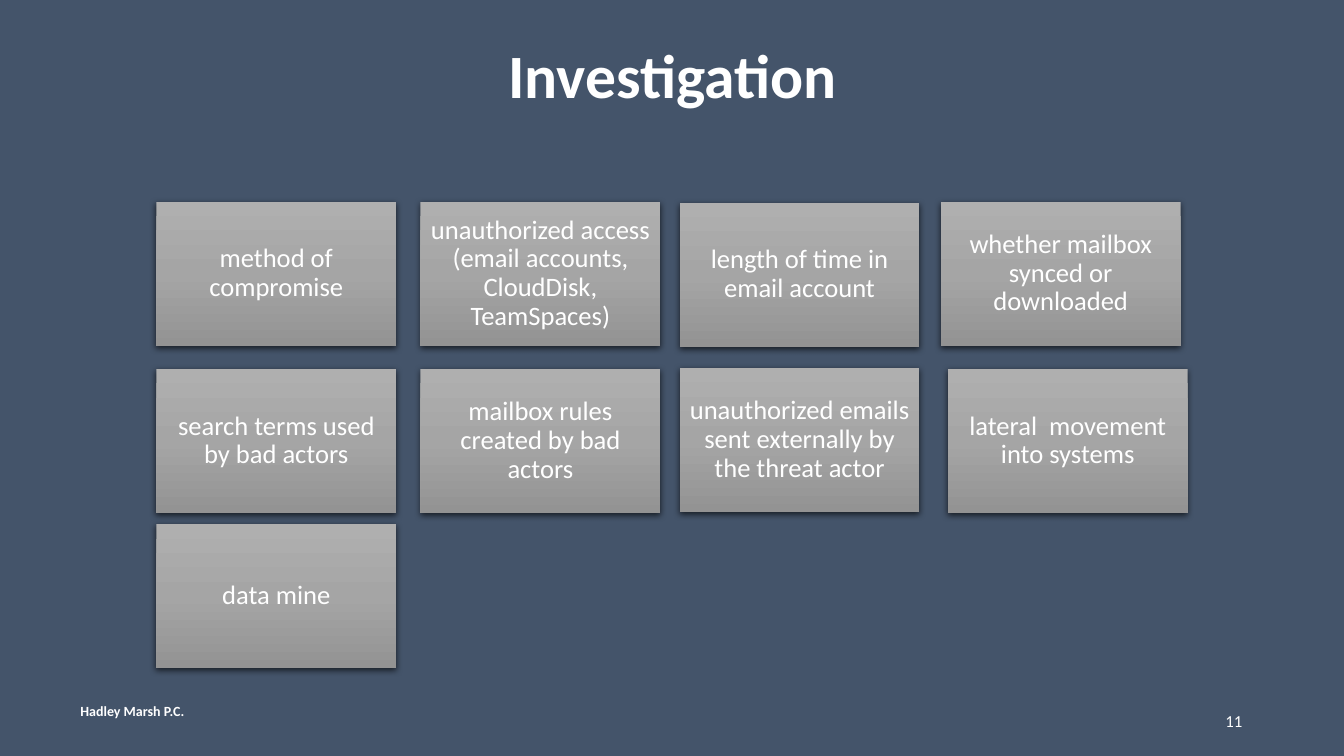
from dataclasses import dataclass

from lxml.etree import SubElement
from pptx import Presentation
from pptx.dml.color import RGBColor
from pptx.enum.shapes import MSO_SHAPE
from pptx.enum.text import MSO_ANCHOR, PP_ALIGN
from pptx.oxml.ns import qn
from pptx.util import Inches, Pt

COLS = (1.55, 4.17, 6.74, 9.33)
ROWS = (2.0, 3.66, 5.2)
CARD_W, CARD_H = 2.38, 1.43
INSET = 0.08
WHITE = "FFFFFF"
GRADIENT = ((0, "AFAFAF"), (50, "A5A5A5"), (100, "939393"))


@dataclass
class Card:
    text: str
    col: int
    row: int
    dx: float = 0
    dy: float = 0


CARDS = (
    Card("method of compromise", 0, 0),
    Card("unauthorized access (email accounts, CloudDisk, TeamSpaces)", 1, 0),
    Card("length of time in email account", 2, 0, dy=0.01),
    Card("whether mailbox synced or downloaded", 3, 0),
    Card("search terms used by bad actors", 0, 1),
    Card("mailbox rules created by bad actors", 1, 1),
    Card("unauthorized emails sent externally by the threat actor", 2, 1, dy=-0.01),
    Card("lateral  movement into systems", 3, 1, dx=0.07),
    Card("data mine", 0, 2),
)


def rgb(color: str) -> RGBColor:
    return RGBColor.from_string(color)


def assign(obj, values: dict) -> None:
    for name, value in values.items():
        setattr(obj, name, value)


def write(sp, text: str, size: float, align, anchor, bold=False, spacing=None, inset=None) -> None:
    tf = sp.text_frame
    assign(tf, {"word_wrap": True, "vertical_anchor": anchor})
    if inset is not None:
        sides = ("left", "top", "right", "bottom")
        assign(tf, {f"margin_{side}": Inches(inset) for side in sides})
    p = tf.paragraphs[0]
    assign(p, {"alignment": align, "line_spacing": spacing})
    r = p.add_run()
    r.text = text
    assign(r.font, {"name": "Calibri", "size": Pt(size), "bold": bold})
    r.font.color.rgb = rgb(WHITE)


def fill_gradient(sp) -> None:
    sp.fill.gradient()
    sp.fill.gradient_angle = 270
    stops = sp.element.spPr.find(qn("a:gradFill")).find(qn("a:gsLst"))
    for stop in list(stops):
        stops.remove(stop)
    for share, color in GRADIENT:
        stop = SubElement(stops, qn("a:gs"), pos=str(share * 1000))
        SubElement(stop, qn("a:srgbClr"), val=color)


def cast_shadow(sp) -> None:
    sp.shadow.inherit = False
    effects = sp.element.spPr.find(qn("a:effectLst"))
    shadow = SubElement(
        effects, qn("a:outerShdw"), blurRad=str(Pt(4.5)), dist=str(Pt(1.5)),
        dir="5400000", algn="ctr", rotWithShape="0",
    )
    color = SubElement(shadow, qn("a:srgbClr"), val="000000")
    SubElement(color, qn("a:alpha"), val="63000")


def add_card(s, card: Card) -> None:
    left, top = COLS[card.col] + card.dx, ROWS[card.row] + card.dy
    sp = s.shapes.add_shape(
        MSO_SHAPE.RECTANGLE, Inches(left), Inches(top), Inches(CARD_W), Inches(CARD_H)
    )
    fill_gradient(sp)
    sp.line.fill.background()
    cast_shadow(sp)
    write(sp, card.text, 19, PP_ALIGN.CENTER, MSO_ANCHOR.MIDDLE, spacing=0.9, inset=INSET)


def add_label(s, box: tuple, text: str, size: float, align, anchor, bold=False) -> None:
    sp = s.shapes.add_textbox(*map(Inches, box))
    write(sp, text, size, align, anchor, bold)


def main() -> None:
    prs = Presentation()
    assign(prs, {"slide_width": Inches(13.33), "slide_height": Inches(7.5)})
    s = prs.slides.add_slide(prs.slide_layouts[5])
    s.background.fill.solid()
    s.background.fill.fore_color.rgb = rgb("44546A")

    title = s.shapes.title
    assign(title, {"left": Inches(0.92), "top": Inches(0.4),
                   "width": Inches(11.5), "height": Inches(1.45)})
    write(title, "Investigation", 44, PP_ALIGN.CENTER, MSO_ANCHOR.TOP, bold=True, spacing=0.9)

    for card in CARDS:
        add_card(s, card)

    add_label(s, (0.7, 6.92, 6.67, 0.27), "Hadley Marsh P.C.", 10,
              PP_ALIGN.LEFT, MSO_ANCHOR.TOP, bold=True)
    add_label(s, (9.42, 6.95, 3, 0.4), "11", 12, PP_ALIGN.RIGHT, MSO_ANCHOR.MIDDLE)
    prs.save("out.pptx")


if __name__ == "__main__":
    main()
